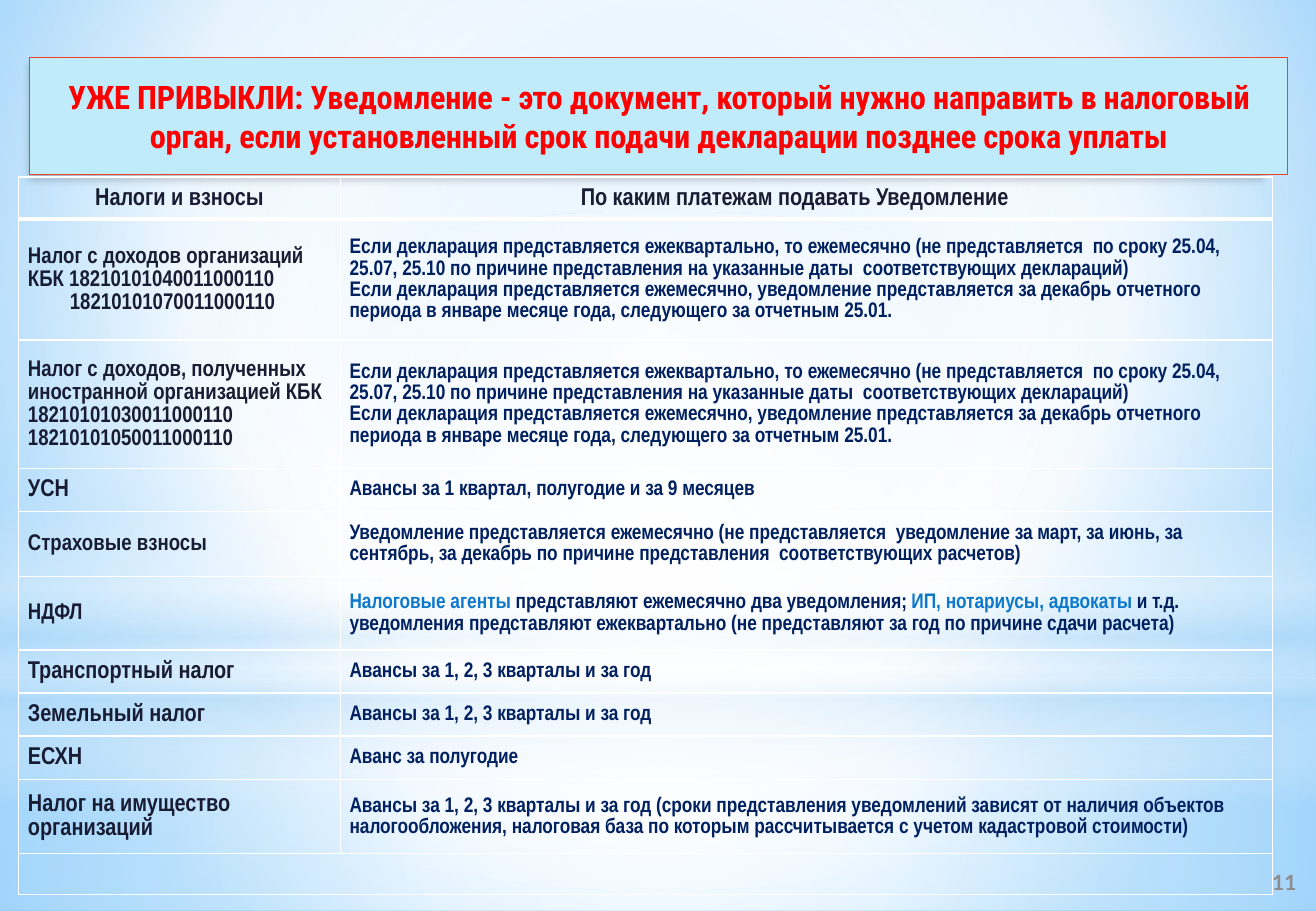
"""Build the slide listing which tax payments need a notification."""
import pptx
import pptx.util
import pptx.oxml
import pptx.dml.color
import pptx.enum.shapes
import pptx.enum.text
from pptx.oxml.ns import nsdecls, qn

Inches, Pt = pptx.util.Inches, pptx.util.Pt
RGB = pptx.dml.color.RGBColor
SHAPE = pptx.enum.shapes.MSO_SHAPE
ANCHOR, ALIGN = pptx.enum.text.MSO_ANCHOR, pptx.enum.text.PP_ALIGN

RED, ORANGE, PALE = RGB(255, 0, 0), RGB(0xF1, 0x41, 0x24), RGB(0xBF, 0xEB, 0xFA)
INK, NAVY, BLUE = RGB(0x19, 0x1D, 0x34), RGB(0, 0x20, 0x60), RGB(0x0D, 0x79, 0xCA)
GREY = RGB(0x8C, 0x8C, 0x8C)
WHITE, SKY = RGB(255, 255, 255), RGB(0xB4, 0xDC, 0xFA)
SKY_EDGE, SKY_DEEP = RGB(0x9E, 0xD5, 0xFF), RGB(0x5B, 0xB9, 0xFF)

SLIDE_W, SLIDE_H = Pt(813), Pt(563)
TITLE = ("УЖЕ ПРИВЫКЛИ: Уведомление - это документ, который нужно направить в налоговый "
         "орган, если установленный срок подачи декларации позднее срока уплаты")
QUARTERLY = [
    "Если декларация представляется ежеквартально, то ежемесячно (не представляется  по сроку 25.04, "
    "25.07, 25.10 по причине представления на указанные даты  соответствующих деклараций)",
    "Если декларация представляется ежемесячно, уведомление представляется за декабрь отчетного "
    "периода в январе месяце года, следующего за отчетным 25.01."]
ADVANCES = "Авансы за 1, 2, 3 кварталы и за год"
HEADER = ("Налоги и взносы", "По каким платежам подавать Уведомление")
# Text between bars is highlighted.
TAXES = [
    (1.04, 14, ["Налог с доходов организаций КБК 18210101040011000110", "18210101070011000110"],
     QUARTERLY),
    (1.10, 14, ["Налог с доходов, полученных иностранной организацией КБК",
                "18210101030011000110", "18210101050011000110"], QUARTERLY),
    (0.37, 15, ["УСН"], ["Авансы за 1 квартал, полугодие и за 9 месяцев"]),
    (0.56, 14, ["Страховые взносы"],
     ["Уведомление представляется ежемесячно (не представляется  уведомление за март, за июнь, за "
      "сентябрь, за декабрь по причине представления  соответствующих расчетов)"]),
    (0.63, 14, ["НДФЛ"],
     ["|Налоговые агенты |представляют ежемесячно два уведомления; |ИП, нотариусы, адвокаты |и т.д. "
      "уведомления представляют ежеквартально (не представляют за год по причине сдачи расчета)"]),
    (0.37, 15, ["Транспортный налог"], [ADVANCES]),
    (0.37, 15, ["Земельный налог"], [ADVANCES]),
    (0.37, 15, ["ЕСХН"], ["Аванс за полугодие"]),
    (0.64, 15, ["Налог на имущество организаций"],
     [ADVANCES + " (сроки представления уведомлений зависят от наличия объектов "
      "налогообложения, налоговая база по которым рассчитывается с учетом кадастровой стоимости)"]),
]
HEADER_H, FOOTER_H = 0.36, 0.35
COLUMNS = (2.76, 8)

CENTRE = (50, 50, 50, 50)
BACKDROP = [(0, SKY_EDGE, 100), (60, WHITE, 100), (100, SKY_DEEP, 100)]
GLOWS = [
    (SHAPE.RECTANGLE, 5.82, 2, [(0, WHITE, 91), (37, WHITE, 76), (100, SKY, 79)], CENTRE),
    (SHAPE.RECTANGLE, 0, 5.82, [(0, WHITE, 89), (48, WHITE, 62), (100, SKY, 79)], CENTRE),
    (SHAPE.RECTANGLE, 4.3, 2.61, [(0, WHITE, 0), (29, WHITE, 30), (45, SKY, 40),
                                  (55, WHITE, 26), (65, SKY, 60), (100, WHITE, 0)], None),
    (SHAPE.OVAL, 1.82, 5.82, [(0, WHITE, 100), (56, WHITE, 0)], CENTRE),
]


def set_gradient(fill, parent, stops, focus):
    """Fill with a circular gradient around focus, or a vertical one without it."""
    fill.gradient()
    old = next(parent.iter(qn("a:gradFill")))
    gs = "".join(f'<a:gs pos="{pos * 1000}"><a:srgbClr val="{color}">'
                 f'<a:alpha val="{alpha * 1000}"/></a:srgbClr></a:gs>'
                 for pos, color, alpha in stops)
    if focus:
        sides = " ".join(f'{side}="{v * 1000}"' for side, v in zip("ltrb", focus))
        direction = f'<a:path path="circle"><a:fillToRect {sides}/></a:path>'
    else:
        direction = '<a:lin ang="5400000" scaled="0"/>'
    new = pptx.oxml.parse_xml(f'<a:gradFill {nsdecls("a")} rotWithShape="1">'
                              f'<a:gsLst>{gs}</a:gsLst>{direction}</a:gradFill>')
    old.getparent().replace(old, new)


def style(font, name, size, color):
    """Apply a bold font."""
    font.name, font.size, font.bold = name, Pt(size), True
    font.color.rgb = color


def set_borders(cell, top, bottom):
    """Give a cell no fill and white borders."""
    cell.fill.background()
    tcPr = cell._tc.get_or_add_tcPr()
    for i, (side, width) in enumerate((("L", 1), ("R", 1), ("T", top), ("B", bottom))):
        tcPr.insert(i, pptx.oxml.parse_xml(
            f'<a:ln{side} {nsdecls("a")} w="{Pt(width)}"><a:solidFill>'
            f'<a:srgbClr val="{WHITE}"/></a:solidFill></a:ln{side}>'))


def write_cell(cell, paragraphs, size, color, align=ALIGN.LEFT):
    """Write paragraphs, highlighting the text between bars."""
    cell.vertical_anchor = ANCHOR.MIDDLE
    cell.margin_left = cell.margin_right = Inches(0.08)
    cell.margin_top = cell.margin_bottom = Inches(0.05)
    tf = cell.text_frame
    for i, text in enumerate(paragraphs):
        p = tf.add_paragraph() if i else tf.paragraphs[0]
        p.alignment, p.line_spacing = align, 1.07
        for j, part in enumerate(text.split("|")):
            if part:
                r = p.add_run()
                r.text = part
                style(r.font, "Arial Narrow", size, BLUE if j % 2 else color)


def add_title(s):
    """Format the title as a framed banner in front of the glows."""
    title = s.shapes.title
    title.element.getparent().append(title.element)
    title.left, title.top, title.width, title.height = map(Inches, (0.25, 0.49, 10.8, 1.01))
    title.fill.solid()
    title.fill.fore_color.rgb = PALE
    title.line.color.rgb, title.line.width = ORANGE, Pt(0.75)
    title.element.spPr.append(pptx.oxml.parse_xml(
        f'<a:effectLst {nsdecls("a")}><a:outerShdw blurRad="{Pt(5)}" dist="{Pt(4)}" dir="5400000" '
        'sx="98000" sy="98000" algn="ctr">'
        '<a:srgbClr val="000000"><a:alpha val="20000"/></a:srgbClr></a:outerShdw></a:effectLst>'))
    tf = title.text_frame
    tf.text = TITLE
    tf.word_wrap, tf.auto_size = True, pptx.enum.text.MSO_AUTO_SIZE.NONE
    tf.vertical_anchor = ANCHOR.MIDDLE
    tf.margin_left = tf.margin_right = tf.margin_top = tf.margin_bottom = 0
    p = tf.paragraphs[0]
    p.alignment, p.space_before = ALIGN.CENTER, Pt(4)
    style(p.runs[0].font, "Roboto Condensed", 20, RED)
    p.runs[0]._r.get_or_add_rPr().set("spc", "-13")


def add_tax_table(s):
    """Add the table of taxes with its header and merged last row."""
    heights = [HEADER_H] + [tax[0] for tax in TAXES] + [FOOTER_H]
    table = s.shapes.add_table(len(heights), 2, Inches(0.16), Inches(1.52),
                               Inches(sum(COLUMNS)), Inches(sum(heights))).table
    table.first_row = table.horz_banding = False
    for column, width in zip(table.columns, COLUMNS):
        column.width = Inches(width)
    for i, height in enumerate(heights):
        table.rows[i].height = Inches(height)
        for cell in table.rows[i].cells:
            set_borders(cell, 3 if i == 1 else 1, 3 if i == 0 else 1)
    for c, text in enumerate(HEADER):
        write_cell(table.cell(0, c), [text], 15, INK, ALIGN.CENTER)
    table.cell(0, 1).margin_right = Inches(0.28)
    for i, (_, size, names, rules) in enumerate(TAXES, 1):
        write_cell(table.cell(i, 0), names, size, INK)
        write_cell(table.cell(i, 1), rules, 13, NAVY)
    second_code = table.cell(1, 0).text_frame.paragraphs[1]
    second_code._p.get_or_add_pPr().set("marL", str(Inches(0.36)))
    last = table.cell(len(heights) - 1, 0)
    last.merge(table.cell(len(heights) - 1, 1))
    last.margin_top = last.margin_bottom = 0


def add_page_number(s):
    """Add the page number at the lower right."""
    tf = s.shapes.add_textbox(*map(Inches, (10.77, 7.36, 0.5, 0.42))).text_frame
    tf.text = "11"
    tf.word_wrap, tf.vertical_anchor = True, ANCHOR.MIDDLE
    tf.margin_left = tf.margin_right = 0
    tf.paragraphs[0].alignment = ALIGN.CENTER
    style(tf.paragraphs[0].runs[0].font, "Lato", 13, GREY)


def main():
    """Build and save the presentation."""
    prs = pptx.Presentation()
    prs.slide_width, prs.slide_height = SLIDE_W, SLIDE_H
    s = prs.slides.add_slide(prs.slide_layouts[5])
    set_gradient(s.background.fill, s.element, BACKDROP, (20, 10, 20, 60))
    for kind, top, height, stops, focus in GLOWS:
        sp = s.shapes.add_shape(kind, 0, Inches(top), SLIDE_W, Inches(height))
        sp.shadow.inherit = False
        sp.line.fill.background()
        set_gradient(sp.fill, sp.element, stops, focus)
    add_title(s)
    add_tax_table(s)
    add_page_number(s)
    prs.save("out.pptx")


if __name__ == "__main__":
    main()
